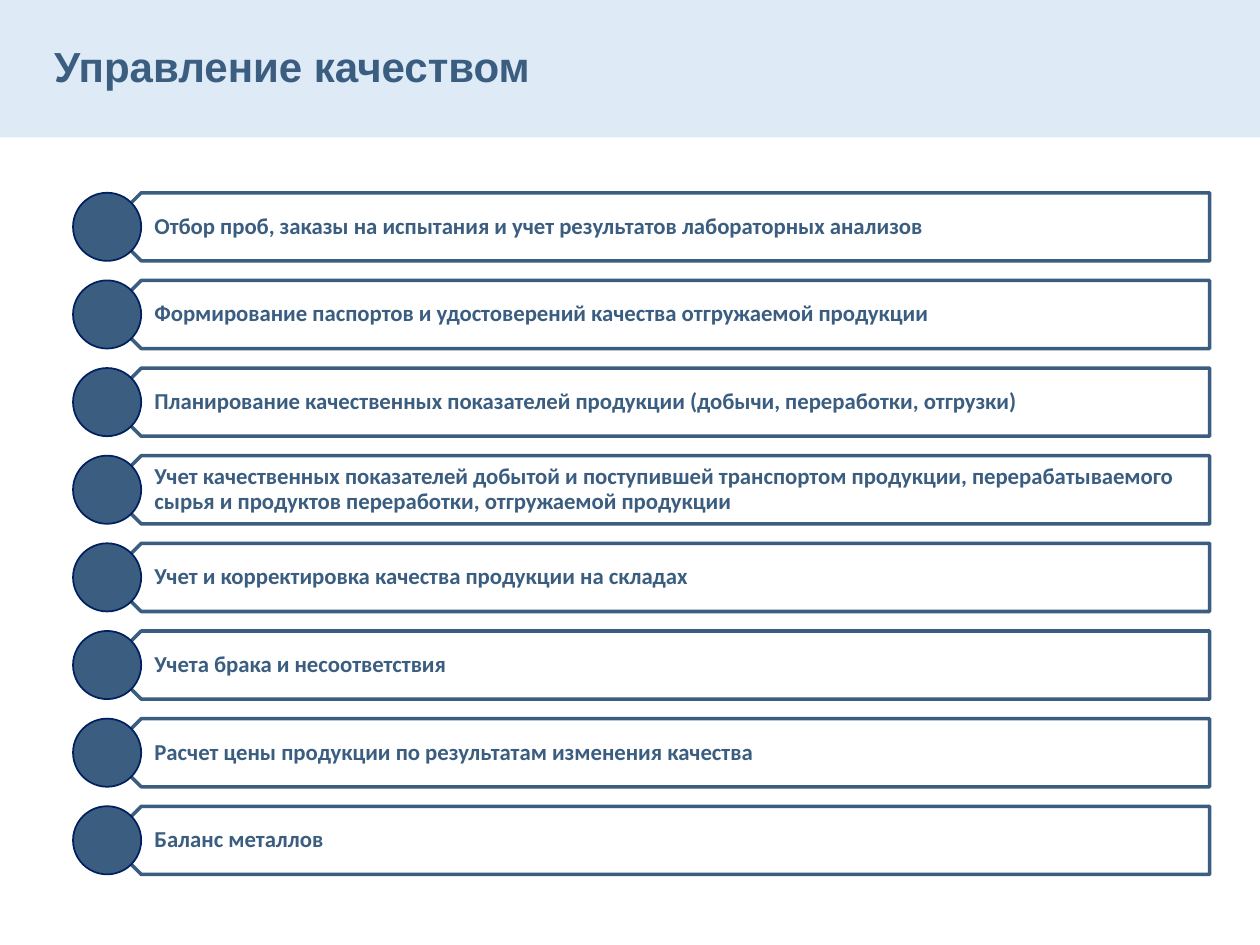
from pptx import Presentation
from pptx.dml.color import RGBColor
from pptx.enum.shapes import MSO_SHAPE
from pptx.enum.text import MSO_ANCHOR, PP_ALIGN
from pptx.util import Inches, Pt

HUES = {"band": "DEEBF7", "steel": "3A5D80", "navy": "002060", "white": "FFFFFF"}
COLS, ROWS = 100, 75
ITEMS = [
    "Отбор проб, заказы на испытания и учет результатов лабораторных анализов",
    "Формирование паспортов и удостоверений качества отгружаемой продукции",
    "Планирование качественных показателей продукции (добычи, переработки, отгрузки)",
    "Учет качественных показателей добытой и поступившей транспортом продукции, "
    "перерабатываемого сырья и продуктов переработки, отгружаемой продукции",
    "Учет и корректировка качества продукции на складах",
    "Учета брака и несоответствия",
    "Расчет цены продукции по результатам изменения качества",
    "Баланс металлов",
]


def hue(name):
    return RGBColor.from_string(HUES[name])


def draw(shapes, kind, box, fill, line=None, width=0):
    shape = shapes.add_shape(kind, *box)
    shape.shadow.inherit = False
    shape.fill.solid()
    shape.fill.fore_color.rgb = hue(fill)
    if line:
        shape.line.color.rgb = hue(line)
        shape.line.width = Pt(width)
    else:
        shape.line.fill.background()
    return shape


def write(frame, text, face, size):
    frame.word_wrap = True
    frame.vertical_anchor = MSO_ANCHOR.MIDDLE
    frame.text = text
    para = frame.paragraphs[0]
    para.alignment = PP_ALIGN.LEFT
    para.line_spacing = 0.9
    para.font.name = face
    para.font.size = Pt(size)
    para.font.bold = True
    para.font.color.rgb = hue("steel")


def header(slide, box, text):
    left, top, wide, high = box
    band = draw(slide.shapes, MSO_SHAPE.RECTANGLE, box, "band")
    title = slide.shapes.title
    title.element.addprevious(band.element)
    title.left, title.top = left + int(wide * 0.033), top + int(high * 0.15)
    title.width, title.height = int(wide * 0.606), int(high * 0.71)
    write(title.text_frame, text, "Arial", 24)


def entry(shapes, box, text):
    left, top, wide, high = box
    half, inset = high // 2, high * 3 // 4
    bar = draw(shapes, MSO_SHAPE.PENTAGON, (left + half, top, wide - half, high),
               "white", "steel", 2)
    bar.rotation = 180
    label = shapes.add_textbox(left + inset, top, wide - inset, high)
    label.text_frame.margin_left = Inches(0.24)
    write(label.text_frame, text, "Calibri", 13)
    draw(shapes, MSO_SHAPE.OVAL, (left, top, high, high), "steel", "navy", 1)


def stack(slide, box, items):
    left, top, wide, high = box
    tall = high // 10
    step = (high - tall) / (len(items) - 1)
    group = slide.shapes.add_group_shape()
    for rank, text in enumerate(items):
        entry(group.shapes, (left, top + int(rank * step), wide, tall), text)


def main():
    deck = Presentation()
    deck.slide_width, deck.slide_height = Inches(10), Inches(7.5)
    col, row = deck.slide_width // COLS, deck.slide_height // ROWS
    slide = deck.slides.add_slide(deck.slide_layouts[5])
    header(slide, (0, 0, COLS * col, int(10.9 * row)), "Управление качеством")
    stack(slide, (int(5.8 * col), int(15.3 * row), int(90.2 * col), int(54.1 * row)), ITEMS)
    deck.save("out.pptx")


if __name__ == "__main__":
    main()
